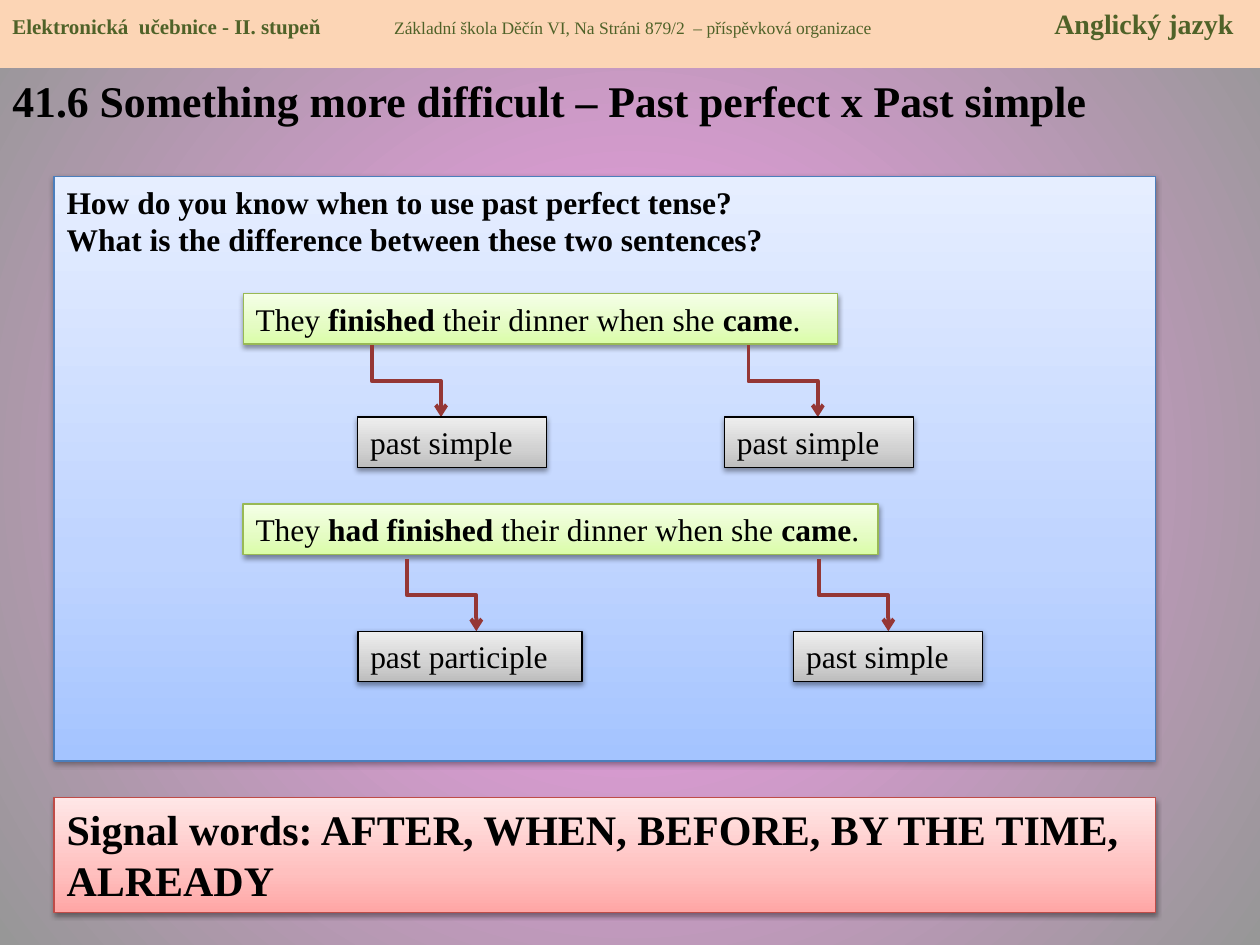
from lxml.etree import SubElement
from pptx import Presentation
from pptx.dml.color import RGBColor
from pptx.enum.shapes import MSO_CONNECTOR as Connector, MSO_SHAPE as Shape
from pptx.enum.text import MSO_ANCHOR as Anchor, PP_ALIGN as Align
from pptx.oxml.ns import qn
from pptx.util import Inches, Pt

COLORS = {
    "text": "000000",
    "band": "FCD5B5",
    "heading": "4F6228",
    "arrow": "953735",
    "glow": "FA9CEF",
    "edge": "979797",
}
PANELS = {
    "blue": (("A4C4FF", "BFD4FF", "E6EEFF"), "4B7EBC"),
    "red": (("FFA6A5", "FFC0BF", "FFE7E7"), "BF4C48"),
    "green": (("DAFDA7", "E4FCC2", "F5FFE7"), "98B955"),
    "gray": (("BDBDBD", "D1D1D1", "EEEEEE"), "000000"),
}
LABEL_HEIGHT = 0.4


def rgb(code):
    return RGBColor.from_string(code)


def add_node(parent, tag, **values):
    return SubElement(parent, qn(tag), {key: str(value) for key, value in values.items()})


def set_gradient(parent, stops):
    solid = parent.find(qn("a:solidFill"))
    gradient = add_node(parent, "a:gradFill", rotWithShape=1)
    stop_list = add_node(gradient, "a:gsLst")
    for position, code in stops:
        stop = add_node(stop_list, "a:gs", pos=position * 1000)
        add_node(stop, "a:srgbClr", val=code)
    parent.replace(solid, gradient)
    return gradient


class LessonSlide:
    font = "Times New Roman"

    def __init__(self, deck):
        self.page = deck.slides.add_slide(deck.slide_layouts[6])

    def background(self, inner, outer):
        self.page.background.fill.solid()
        properties = self.page.background._cSld.bg.bgPr
        gradient = set_gradient(properties, ((0, inner), (100, outer)))
        circle = add_node(gradient, "a:path", **{"path": "circle"})
        add_node(circle, "a:fillToRect", l=50000, t=50000, r=50000, b=50000)

    def add_text(self, box, paragraphs, color=COLORS["text"]):
        frame = box.text_frame
        frame.word_wrap = True
        frame.vertical_anchor = Anchor.TOP
        for index, spans in enumerate(paragraphs):
            para = frame.add_paragraph() if index else frame.paragraphs[0]
            para.alignment = Align.LEFT
            for text, size, bold in spans:
                span = para.add_run()
                span.text = text
                formats = {"name": self.font, "size": Pt(size), "bold": bold}
                for key, value in formats.items():
                    setattr(span.font, key, value)
                span.font.color.rgb = rgb(color)

    def title(self, text, left, top, width, height):
        box = self.page.shapes.add_textbox(*map(Inches, (left, top, width, height)))
        self.add_text(box, [[(text, 25, True)]])

    def rectangle(self, left, top, width, height, fill):
        box = self.page.shapes.add_shape(
            Shape.RECTANGLE, *map(Inches, (left, top, width, height)))
        box.shadow.inherit = False
        box.fill.solid()
        box.fill.fore_color.rgb = rgb(fill)
        return box

    def header(self, spans, tabs, height):
        box = self.rectangle(0, 0, 10, height, COLORS["band"])
        box.line.fill.background()
        self.add_text(box, [spans], COLORS["heading"])
        properties = box.text_frame.paragraphs[0]._p.get_or_add_pPr()
        tab_list = add_node(properties, "a:tabLst")
        for tab in tabs:
            add_node(tab_list, "a:tab", pos=Inches(tab), algn="l")

    def panel(self, left, top, width, height, style, paragraphs):
        shades, outline = PANELS[style]
        box = self.rectangle(left, top, width, height, shades[0])
        box.line.color.rgb = rgb(outline)
        box.line.width = Pt(0.75)
        properties = box._element.spPr
        gradient = set_gradient(properties, zip((0, 35, 100), shades))
        add_node(gradient, "a:lin", ang=270 * 60000, scaled=1)
        shadow = add_node(properties.find(qn("a:effectLst")), "a:outerShdw",
                          blurRad=Pt(3.1), dist=Pt(1.6), dir=90 * 60000, rotWithShape=0)
        tint = add_node(shadow, "a:srgbClr", val=COLORS["text"])
        add_node(tint, "a:alpha", val=38000)
        self.add_text(box, paragraphs)

    def elbow_arrow(self, left, top, run=0.55, drop=0.57):
        middle_x, middle_y = left + run / 2, top + drop / 2
        arrow = self.page.shapes.add_connector(
            Connector.ELBOW,
            Inches(middle_x + drop / 2), Inches(middle_y - run / 2),
            Inches(middle_x - drop / 2), Inches(middle_y + run / 2))
        arrow.line.color.rgb = rgb(COLORS["arrow"])
        arrow.line.width = Pt(2.25)
        properties = arrow._element.spPr
        properties.find(qn("a:xfrm")).set("rot", str(270 * 60000))
        add_node(properties.find(qn("a:ln")), "a:tailEnd", type="arrow")
        add_node(properties, "a:effectLst")

    def example(self, top, width, verb, arrow_top, arrow_lefts, labels):
        words = (("They ", False), (verb, True), (" their dinner when she ", False),
                 ("came", True), (".", False))
        self.panel(1.93, top, width, LABEL_HEIGHT, "green",
                   [[(text, 18, bold) for text, bold in words]])
        for left in arrow_lefts:
            self.elbow_arrow(left, arrow_top)
        for left, label_width, text in labels:
            self.panel(left, arrow_top + 0.57, label_width, LABEL_HEIGHT, "gray",
                       [[(text, 18, False)]])


def main():
    deck = Presentation()
    deck.slide_width, deck.slide_height = Inches(10), Inches(7.5)
    slide = LessonSlide(deck)
    slide.background(COLORS["glow"], COLORS["edge"])
    slide.title("41.6 Something more difficult – Past perfect x Past simple",
                0, 0.54, 10, 6.96)
    slide.header([
        ("Elektronická  učebnice - II. stupeň\t", 12, True),
        ("Základní škola Děčín VI, Na Stráni 879/2  – příspěvková organizace\t", 10, False),
        ("Anglický jazyk", 16, True),
    ], tabs=(3.03, 8.27), height=0.54)
    slide.panel(0.43, 1.4, 8.74, 4.64, "blue", [
        [("How do you know when to use past perfect tense?", 18, True)],
        [("What is the difference between these two sentences?", 18, True)],
    ])
    slide.panel(0.43, 6.33, 8.74, 0.91, "red", [
        [("Signal words: AFTER, WHEN, BEFORE, BY THE TIME, ALREADY", 24, True)],
    ])
    slide.example(2.33, 4.72, "finished", 2.74, (2.95, 5.94),
                  [(2.84, 1.5, "past simple"), (5.75, 1.5, "past simple")])
    slide.example(4, 5.04, "had finished", 4.44, (3.23, 6.5),
                  [(2.84, 1.78, "past participle"), (6.3, 1.5, "past simple")])
    deck.save("out.pptx")


if __name__ == "__main__":
    main()
